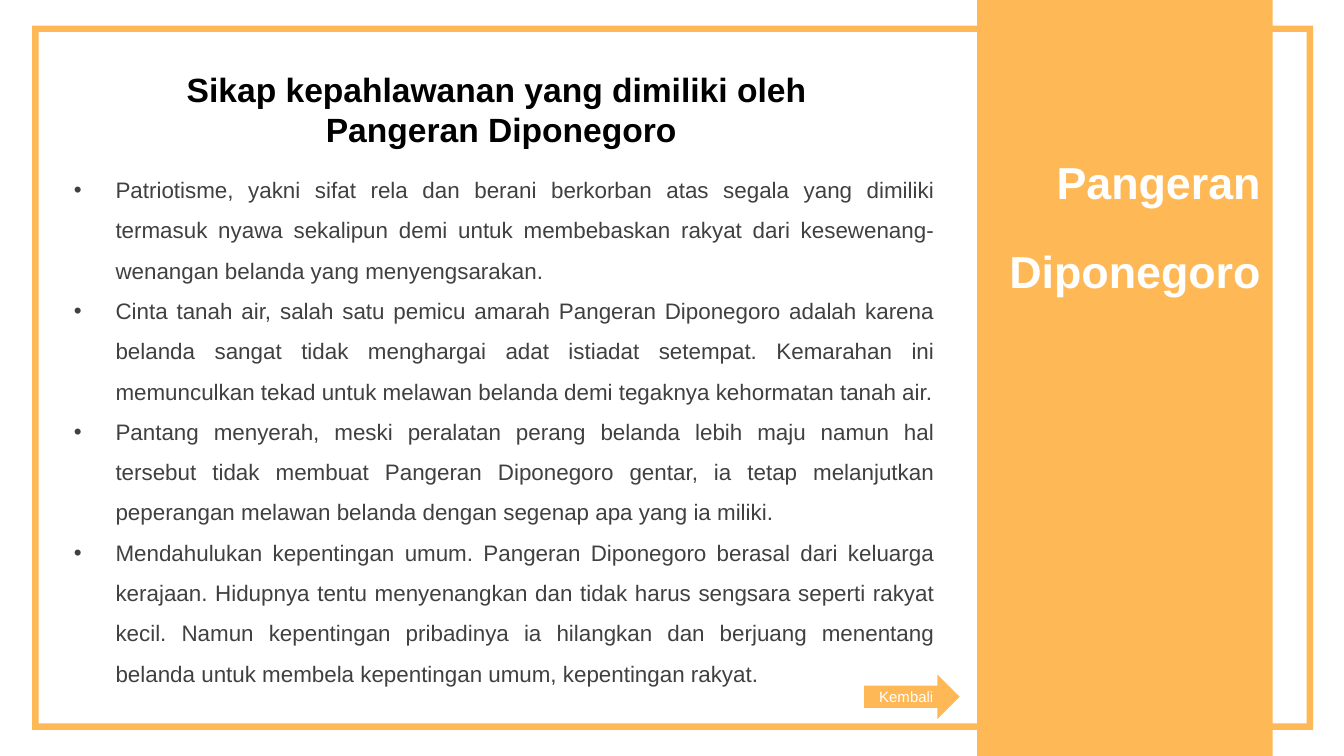
from dataclasses import dataclass

from pptx import Presentation
from pptx.dml.color import RGBColor
from pptx.enum import shapes, text
from pptx.util import Inches, Pt

COLORS = {"accent": "FEB856", "white": "FFFFFF", "body": "404040", "heading": "000000"}
ALIGN = text.PP_ALIGN
PAGE_WIDTH = 10
PAGE_HEIGHT = PAGE_WIDTH * 9 / 16


@dataclass
class Block:
    """Position and size in inches."""
    left: float
    top: float
    width: float
    height: float

    def lengths(self) -> list:
        return [Inches(v) for v in (self.left, self.top, self.width, self.height)]


@dataclass
class Style:
    size: float
    color: str
    align: int
    bold: bool = False
    line_spacing: float = 1.0
    space_before: float = 0
    anchor: int = text.MSO_ANCHOR.TOP


TITLE = Style(24, "white", ALIGN.RIGHT, True, 1.5, 4.8)
HEADING = Style(18, "heading", ALIGN.CENTER, True)
BODY = Style(12, "body", ALIGN.JUSTIFY, line_spacing=1.5)
BUTTON = Style(8, "white", ALIGN.CENTER, anchor=text.MSO_ANCHOR.MIDDLE)

ATTITUDES = [
    "Patriotisme, yakni sifat rela dan berani berkorban atas segala yang dimiliki "
    "termasuk nyawa sekalipun demi untuk membebaskan rakyat dari "
    "kesewenang-wenangan belanda yang menyengsarakan.",
    "Cinta tanah air, salah satu pemicu amarah Pangeran Diponegoro adalah karena "
    "belanda sangat tidak menghargai adat istiadat setempat. Kemarahan ini "
    "memunculkan tekad untuk melawan belanda demi tegaknya kehormatan tanah air.",
    "Pantang menyerah, meski peralatan perang belanda lebih maju namun hal "
    "tersebut tidak membuat Pangeran Diponegoro gentar, ia tetap melanjutkan "
    "peperangan melawan belanda dengan segenap apa yang ia miliki.",
    "Mendahulukan kepentingan umum. Pangeran Diponegoro berasal dari keluarga "
    "kerajaan. Hidupnya tentu menyenangkan dan tidak harus sengsara seperti rakyat "
    "kecil. Namun kepentingan pribadinya ia hilangkan dan berjuang menentang "
    "belanda untuk membela kepentingan umum, kepentingan rakyat.",
]


def add_accent(page, kind: int, block: Block):
    shape = page.shapes.add_shape(kind, *block.lengths())
    shape.shadow.inherit = False
    shape.fill.solid()
    shape.fill.fore_color.rgb = RGBColor.from_string(COLORS["accent"])
    shape.line.fill.background()
    return shape


def write(box, lines: list[str], style: Style) -> None:
    frame = box.text_frame
    frame.word_wrap = True
    frame.auto_size = text.MSO_AUTO_SIZE.NONE
    frame.vertical_anchor = style.anchor
    para_format = {"alignment": style.align, "line_spacing": style.line_spacing,
                   "space_before": Pt(style.space_before), "space_after": Pt(0)}
    font_format = {"name": "Arial", "size": Pt(style.size), "bold": style.bold}
    for index, line in enumerate(lines):
        para = frame.add_paragraph() if index else frame.paragraphs[0]
        for name, value in para_format.items():
            setattr(para, name, value)
        span = para.add_run()
        span.text = line
        for name, value in font_format.items():
            setattr(span.font, name, value)
        span.font.color.rgb = RGBColor.from_string(COLORS[style.color])


def place(box, block: Block) -> None:
    """Move a placeholder to its block and bring it to the front."""
    box.left, box.top, box.width, box.height = block.lengths()
    box.element.getparent().append(box.element)


def indent_bullets(box, hang: float) -> None:
    for para in box.text_frame.paragraphs:
        properties = para._p.get_or_add_pPr()
        properties.set("marL", str(Inches(hang)))
        properties.set("indent", str(-Inches(hang)))


def main() -> None:
    deck = Presentation()
    deck.slide_width, deck.slide_height = Inches(PAGE_WIDTH), Inches(PAGE_HEIGHT)
    page = deck.slides.add_slide(deck.slide_layouts[1])
    title, body = page.shapes.title, page.placeholders[1]

    border = add_accent(page, shapes.MSO_SHAPE.FRAME, Block(0.24, 0.19, 9.53, 5.24))
    border.adjustments[0] = 0.009
    add_accent(page, shapes.MSO_SHAPE.RECTANGLE, Block(7.27, 0, 2.2, PAGE_HEIGHT))

    place(title, Block(7.13, 0.9, 2.35, 1.58))
    write(title, ["Pangeran", "Diponegoro"], TITLE)

    place(body, Block(0.45, 1.16, 6.61, 4))
    write(body, ATTITUDES, BODY)
    indent_bullets(body, 0.31)

    heading = page.shapes.add_textbox(*Block(0.27, 0.46, 6.92, 0.71).lengths())
    write(heading, ["Sikap kepahlawanan yang dimiliki oleh ", "Pangeran Diponegoro"], HEADING)

    back = add_accent(page, shapes.MSO_SHAPE.RIGHT_ARROW, Block(6.43, 5.02, 0.71, 0.33))
    write(back, ["Kembali"], BUTTON)

    deck.save("out.pptx")


if __name__ == "__main__":
    main()
